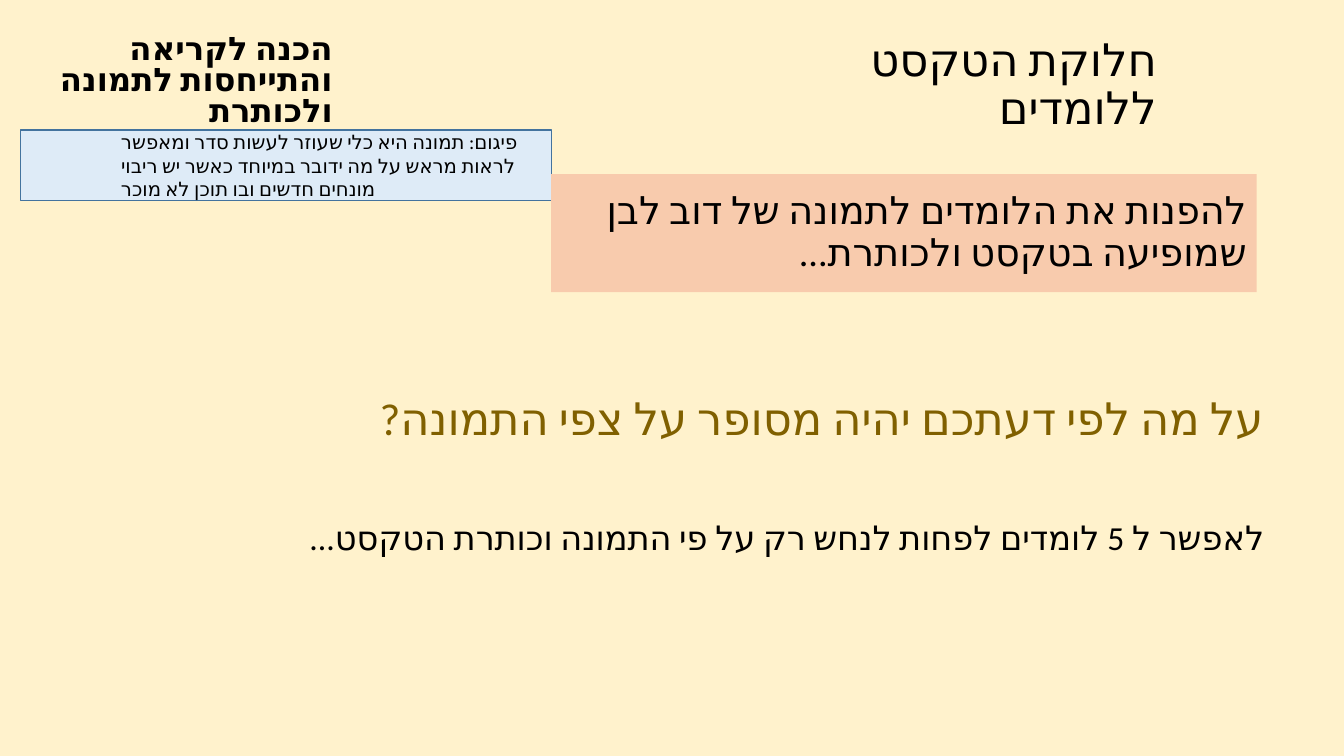
from dataclasses import dataclass

from lxml.etree import SubElement
from pptx import Presentation
from pptx.dml.color import RGBColor as RGB
from pptx.enum.shapes import MSO_SHAPE as Shape
from pptx.enum.text import MSO_ANCHOR as Anchor, PP_ALIGN as Align
from pptx.oxml.ns import qn
from pptx.util import Cm, Pt


@dataclass(frozen=True)
class Theme:
    font: str = "Calibri"
    cream: RGB = RGB(0xFF, 0xF2, 0xCC)
    blue: RGB = RGB(0xDE, 0xEB, 0xF7)
    edge: RGB = RGB(0x43, 0x73, 0x9E)
    peach: RGB = RGB(0xF8, 0xCB, 0xAD)
    black: RGB = RGB(0, 0, 0)
    gold: RGB = RGB(0x80, 0x60, 0x00)
    title: float = 32
    task: float = 27.3
    body: float = 24
    head: float = 23.1
    note: float = 14


theme = Theme()


def style(para, size, color=theme.black, bold=False, rtl=True, lead=0.9):
    """Format a Hebrew paragraph and its runs, including the complex-script font."""
    para.alignment = Align.RIGHT if rtl else Align.LEFT
    para.line_spacing = lead
    para._p.get_or_add_pPr().set("rtl", str(int(rtl)))
    for run in para.runs:
        font = run.font
        font.name, font.size, font.bold = theme.font, Pt(size), bold
        font.color.rgb = color
        props = run._r.get_or_add_rPr()
        props.set("lang", "he-IL")
        SubElement(props, qn("a:cs")).set("typeface", theme.font)


deck = Presentation()
deck.slide_width, deck.slide_height = Cm(33.87), Cm(19.05)
slide = deck.slides.add_slide(deck.slide_layouts[5])
fill = slide.background.fill
fill.solid()
fill.fore_color.rgb = theme.cream

# Title
title = slide.shapes.title
title.left, title.top, title.width, title.height = Cm(19.38), Cm(1.17), Cm(10.03), Cm(1.98)
frame = title.text_frame
frame.text = "חלוקת הטקסט ללומדים"
frame.vertical_anchor = Anchor.MIDDLE
style(frame.paragraphs[0], theme.title)

# Question and instruction
body = slide.shapes.add_textbox(Cm(2.34), Cm(8.59), Cm(29.77), Cm(8.56))
frame = body.text_frame
frame.word_wrap = True
frame.margin_top = Cm(1.4)
ask = frame.paragraphs[0]
ask.text = "על מה לפי דעתכם יהיה מסופר על צפי התמונה?"
style(ask, theme.title, theme.gold)
guess = frame.add_paragraph()
guess.text = "לאפשר ל 5 לומדים לפחות לנחש רק על פי התמונה וכותרת הטקסט..."
guess.space_before = Pt(55)
style(guess, theme.body)

# Filled boxes: place, fill, line, text, paragraph style
boxes = [
    ((0.51, 1.04, 8.13, 2.06), theme.cream, None,
     "הכנה לקריאה והתייחסות לתמונה ולכותרת",
     dict(size=theme.head, bold=True, lead=0.8)),
    ((0.51, 3.28, 13.39, 1.78), theme.blue, theme.edge,
     "פיגום: תמונה היא כלי שעוזר לעשות סדר ומאפשר לראות מראש על מה ידובר "
     "במיוחד כאשר יש ריבוי מונחים חדשים ובו תוכן לא מוכר",
     dict(size=theme.note, rtl=False, lead=1.0)),
    ((13.89, 4.39, 17.78, 2.97), theme.peach, None,
     "להפנות את הלומדים לתמונה של דוב לבן שמופיעה בטקסט ולכותרת...",
     dict(size=theme.task)),
]
for place, color, edge, text, look in boxes:
    box = slide.shapes.add_shape(Shape.RECTANGLE, *map(Cm, place))
    box.shadow.inherit = False
    box.fill.solid()
    box.fill.fore_color.rgb = color
    if edge:
        box.line.color.rgb = edge
        box.line.width = Pt(1)
    else:
        box.line.fill.background()
    frame = box.text_frame
    frame.word_wrap = True
    frame.vertical_anchor = Anchor.MIDDLE
    frame.text = text
    para = frame.paragraphs[0]
    style(para, **look)
    if not look.get("rtl", True):
        para._p.get_or_add_pPr().set("marL", str(Cm(2.29)))

deck.save("out.pptx")
